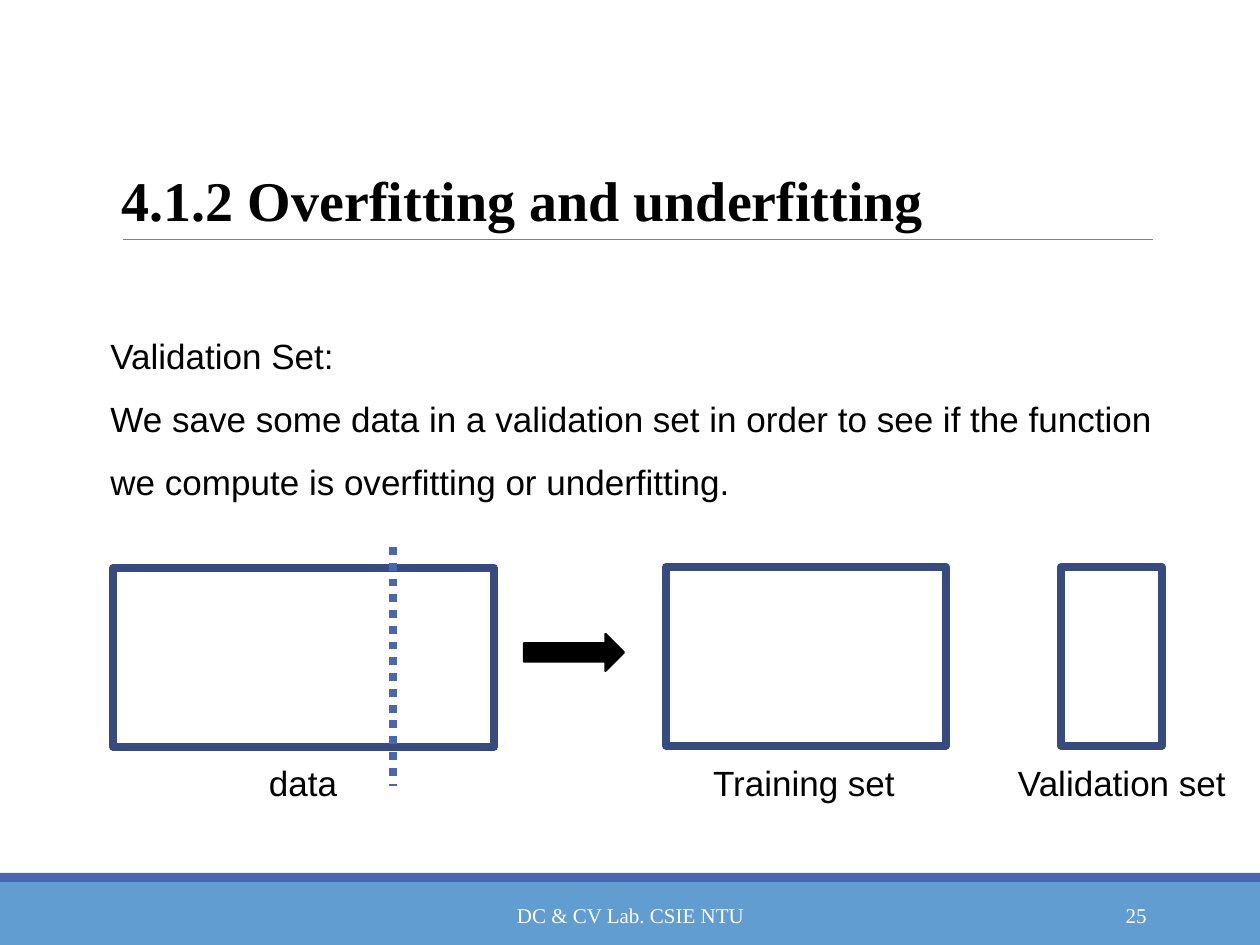
import pptx
import pptx.util
import pptx.dml.color
import pptx.enum.dml
import pptx.enum.shapes
import pptx.enum.text
import pptx.oxml.ns
import lxml.etree

EMU_PER_PX = 914400 // 126

RGB = pptx.dml.color.RGBColor
BLACK = RGB(0x00, 0x00, 0x00)
WHITE = RGB(0xFF, 0xFF, 0xFF)
GRAY = RGB(0x80, 0x80, 0x80)
SKY = RGB(0x62, 0x9D, 0xD1)
BLUE = RGB(0x4A, 0x66, 0xAC)
NAVY = RGB(0x37, 0x4B, 0x7F)

SHAPE = pptx.enum.shapes.MSO_SHAPE
ALIGN = pptx.enum.text.PP_ALIGN
ANCHOR = pptx.enum.text.MSO_ANCHOR
SERIF, SANS = "Times New Roman", "Arial"


def px(*lengths):
    return [pptx.util.Emu(length * EMU_PER_PX) for length in lengths]


class SlideBuilder:
    def __init__(self, slide):
        self.slide = slide

    def shape(self, kind, box, fill=None, line=None, width=4.5):
        shape = self.slide.shapes.add_shape(kind, *px(*box))
        shape.shadow.inherit = False
        if fill is None:
            shape.fill.background()
        else:
            shape.fill.solid()
            shape.fill.fore_color.rgb = fill
        if line is None:
            shape.line.fill.background()
        else:
            shape.line.color.rgb = line
            shape.line.width = pptx.util.Pt(width)

    def line(self, start, end, color, width, dash=None):
        line = self.slide.shapes.add_connector(
            pptx.enum.shapes.MSO_CONNECTOR.STRAIGHT, *px(*start, *end))
        line.line.color.rgb = color
        line.line.width = pptx.util.Pt(width)
        if dash is not None:
            line.line.dash_style = dash
        lxml.etree.SubElement(line._element.spPr, pptx.oxml.ns.qn("a:effectLst"))

    def text(self, box, paragraphs, size=20, font=SANS, color=BLACK, bold=False,
             align=ALIGN.LEFT, anchor=ANCHOR.TOP, wrap=True, spacing=None, margin=None):
        frame = self.slide.shapes.add_textbox(*px(*box)).text_frame
        frame.word_wrap = wrap
        frame.vertical_anchor = anchor
        if margin is not None:
            frame.margin_left, frame.margin_right = px(margin, margin)
        frame.text = "\n".join(paragraphs)
        for paragraph in frame.paragraphs:
            paragraph.alignment = align
            paragraph.line_spacing = spacing
            paragraph.font.size = pptx.util.Pt(size)
            paragraph.font.name = font
            paragraph.font.bold = bold
            paragraph.font.color.rgb = color


def main():
    deck = pptx.Presentation()
    deck.slide_width, deck.slide_height = px(1260, 945)
    builder = SlideBuilder(deck.slides.add_slide(deck.slide_layouts[6]))

    # Footer band
    builder.shape(SHAPE.RECTANGLE, (0, 882, 1260, 63), fill=SKY)
    builder.shape(SHAPE.RECTANGLE, (0, 873, 1260, 9), fill=BLUE)
    footer = dict(size=12, font=SERIF, color=WHITE, anchor=ANCHOR.MIDDLE)
    builder.text((381, 890, 499, 50), ["DC & CV Lab. CSIE NTU"], align=ALIGN.CENTER, **footer)
    builder.text((1023, 890, 136, 50), ["25"], align=ALIGN.RIGHT, **footer)

    # Title and its rule
    builder.line((123, 239), (1153, 239), GRAY, 0.5)
    builder.text((113, 39, 1040, 200), ["4.1.2 Overfitting and underfitting"],
                 size=32, font=SERIF, bold=True, anchor=ANCHOR.BOTTOM, margin=9)

    # Explanation
    builder.text((98, 307, 1118, 260), [
        "Validation Set:",
        "We save some data in a validation set in order to see if the function "
        "we compute is overfitting or underfitting.",
    ], spacing=1.5)

    # Data split into training and validation sets
    for left, top, width in ((113, 568, 381), (666, 567, 280), (1061, 567, 101)):
        builder.shape(SHAPE.RECTANGLE, (left, top, width, 179), line=NAVY)
    builder.line((393, 547), (393, 786), BLUE, 4.5, pptx.enum.dml.MSO_LINE.ROUND_DOT)
    builder.shape(SHAPE.RIGHT_ARROW, (524, 634, 100, 37), fill=BLACK, line=BLACK, width=1.25)

    # Labels under the boxes
    for label, left, width in (("data", 256, 94), ("Training set", 699, 210),
                               ("Validation set", 1003, 238)):
        builder.text((left, 755, width, 55), [label], align=ALIGN.CENTER, wrap=False)

    deck.save("out.pptx")


if __name__ == "__main__":
    main()
